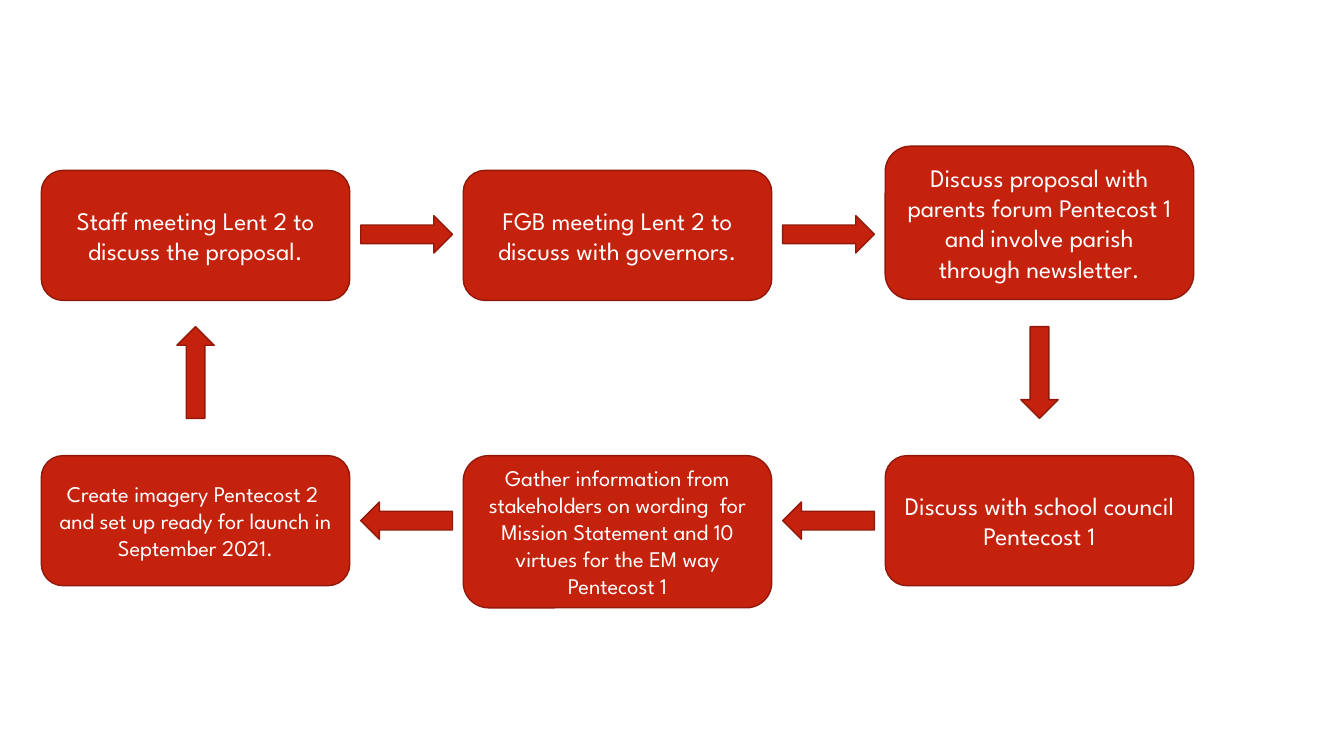
import pptx
import pptx.util
import pptx.dml.color
import pptx.enum.shapes
import pptx.enum.text

Inches = pptx.util.Inches
Pt = pptx.util.Pt
KINDS = pptx.enum.shapes.MSO_SHAPE

FONT = "League Spartan"
RED, EDGE, WHITE = "C4220D", "91190A", "FFFFFF"
LEFT, STEP, WIDTH = 0.41, 4.185, 3.06
ARROW_W, ARROW_H = 0.91, 0.37

# column, top, height, size, text
STEPS = [
    (0, 1.69, 1.29, 18, "Staff meeting Lent 2 to discuss the proposal."),
    (1, 1.69, 1.29, 18, "FGB meeting Lent 2 to discuss with governors."),
    (2, 1.45, 1.52, 18, "Discuss proposal with parents forum Pentecost 1 "
                        "and involve parish through newsletter."),
    (2, 4.52, 1.29, 18, "Discuss with school council Pentecost 1"),
    (1, 4.52, 1.51, 16, "Gather information from stakeholders on wording  for "
                        "Mission Statement and 10 virtues for the EM way Pentecost 1"),
    (0, 4.52, 1.29, 16, "Create imagery Pentecost 2  and set up ready for launch "
                        "in September 2021."),
]
ARROWS = [
    (0.5, 2.14, 0), (1.5, 2.14, 0), (2, 3.51, 90),
    (1.5, 4.98, 180), (0.5, 4.98, 180), (0, 3.51, 270),
]


def color(code):
    return pptx.dml.color.RGBColor.from_string(code)


def add(slide, kind, col, top, width, height):
    left = LEFT + col * STEP + (WIDTH - width) / 2
    shape = slide.shapes.add_shape(
        kind, Inches(left), Inches(top), Inches(width), Inches(height))
    shape.shadow.inherit = False
    shape.fill.solid()
    shape.fill.fore_color.rgb = color(RED)
    shape.line.color.rgb = color(EDGE)
    shape.line.width = Pt(1)
    return shape


def write(shape, text, size):
    frame = shape.text_frame
    frame.word_wrap = True
    frame.vertical_anchor = pptx.enum.text.MSO_ANCHOR.MIDDLE
    para = frame.paragraphs[0]
    para.text = text
    para.alignment = pptx.enum.text.PP_ALIGN.CENTER
    para.font.name = FONT
    para.font.size = Pt(size)
    para.font.color.rgb = color(WHITE)


def main():
    deck = pptx.Presentation()
    deck.slide_width, deck.slide_height = Inches(13.33), Inches(7.5)
    slide = deck.slides.add_slide(deck.slide_layouts[6])
    for col, top, height, size, text in STEPS:
        box = add(slide, KINDS.ROUNDED_RECTANGLE, col, top, WIDTH, height)
        write(box, text, size)
    for col, top, turn in ARROWS:
        arrow = add(slide, KINDS.RIGHT_ARROW, col, top, ARROW_W, ARROW_H)
        arrow.rotation = turn
    deck.save("out.pptx")


if __name__ == "__main__":
    main()
